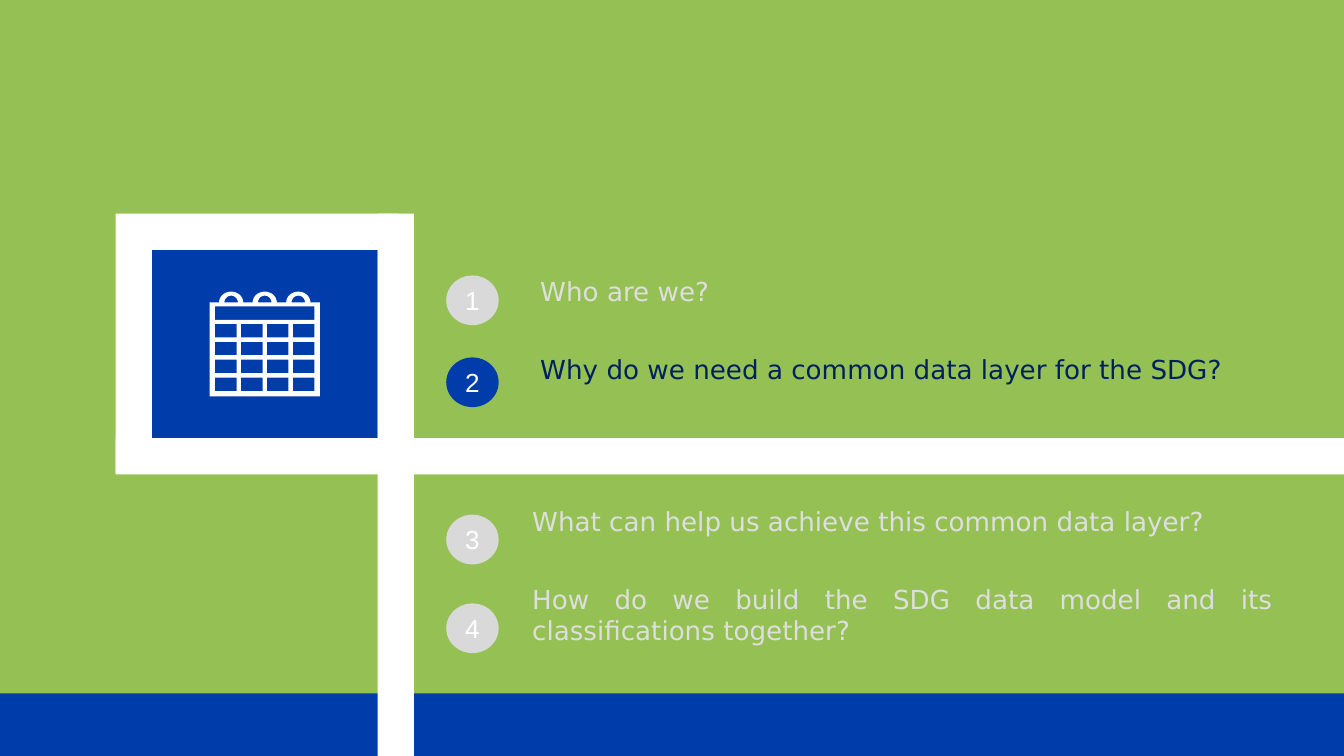
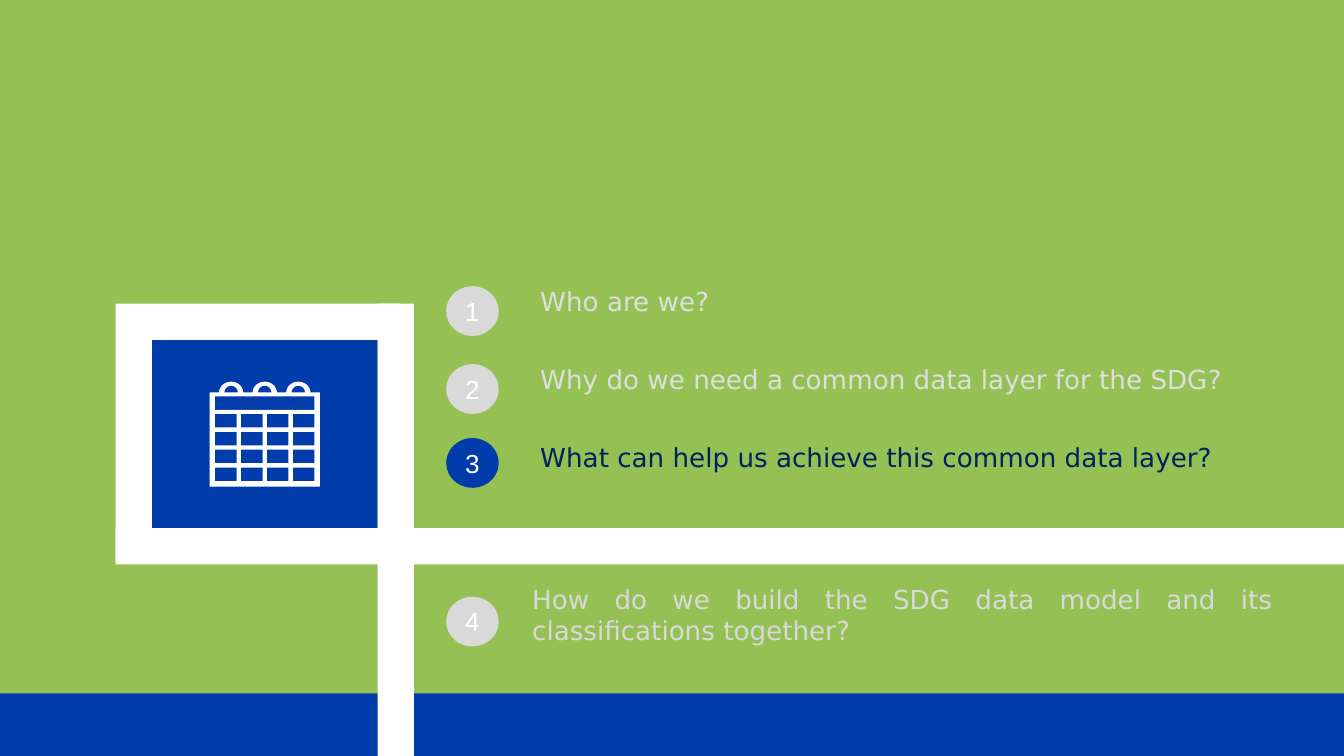
from math import cos, pi, sin

from pptx import Presentation
from pptx.dml.color import RGBColor
from pptx.enum.shapes import MSO_SHAPE as SHAPE
from pptx.enum.text import MSO_ANCHOR as ANCHOR, PP_ALIGN as ALIGN
from pptx.util import Inches, Pt

GREEN = RGBColor(0x95, 0xC1, 0x54)
BLUE = RGBColor(0x00, 0x3D, 0xAB)
NAVY = RGBColor(0x00, 0x20, 0x60)
WHITE = RGBColor(0xFF, 0xFF, 0xFF)
BADGE_GREY = RGBColor(0xD9, 0xD9, 0xD9)
TEXT_GREY = RGBColor(0xDE, 0xDE, 0xDE)

WIDTH = 10
HEIGHT = WIDTH * 9 / 16
BAR = 0.27  # thickness of the white bars
FONT_SIZE = Pt(14)

TOPICS = [
    "Who are we?",
    "Why do we need a common data layer for the SDG?",
    "What can help us achieve this common data layer?",
    "How do we build the SDG data model and its classifications together?",
]

# One entry per slide: frame top, current topic, badge tops, and the text
# blocks as (left, top, height, first topic, last topic, resting color)
AGENDAS = [
    (1.59, 2, [2.05, 2.66, 3.83, 4.49],
     [(3.88, 3.76, 1.31, 3, 4, TEXT_GREY), (3.94, 2.05, 1.1, 1, 2, TEXT_GREY)]),
    (2.26, 3, [2.13, 2.71, 3.26, 4.44],
     [(3.88, 4.34, 0.73, 4, 4, BADGE_GREY), (3.94, 2.12, 1.7, 1, 3, TEXT_GREY)]),
]


def add_block(slide, kind, left, top, width, height, color):
    shape = slide.shapes.add_shape(
        kind, Inches(left), Inches(top), Inches(width), Inches(height))
    shape.shadow.inherit = False
    shape.fill.solid()
    shape.fill.fore_color.rgb = color
    shape.line.fill.background()
    return shape


def arc_points(center, base, radius_x, radius_y, steps=16):
    """Upper half of an ellipse, from right to left."""
    angles = [pi * step / steps for step in range(steps + 1)]
    return [(Inches(center + radius_x * cos(angle)),
             Inches(base - radius_y * sin(angle))) for angle in angles]


presentation = Presentation()
presentation.slide_width = Inches(WIDTH)
presentation.slide_height = Inches(HEIGHT)
background = presentation.slide_master.background.fill
background.solid()
background.fore_color.rgb = GREEN

for frame_top, current, badge_tops, text_blocks in AGENDAS:
    slide = presentation.slides.add_slide(presentation.slide_layouts[6])

    # Blue tile
    add_block(slide, SHAPE.RECTANGLE, 1.13, frame_top + BAR, 1.68, 1.41, BLUE)

    # Calendar: body with three rings, then the holes in it
    left, right = 1.56, 2.38
    top, bottom = frame_top + 0.66, frame_top + 1.36
    rings = [2.22, 1.97, 1.72]
    outline = [(Inches(right), Inches(top))]
    for ring in rings:
        outline += arc_points(ring, top, 0.09, 0.08)
    outline += [(Inches(x), Inches(y))
                for x, y in [(left, top), (left, bottom), (right, bottom)]]
    contours = [outline] + [arc_points(ring, top, 0.05, 0.05) for ring in rings]

    holes = [(1.6, top + 0.03, 0.74)]
    holes += [(1.6 + 0.58 * column / 3, top + 0.16 + 0.4 * row / 3, 0.16)
              for row in range(4) for column in range(4)]
    for x, y, width in holes:
        corners = [(x, y), (x + width, y), (x + width, y + 0.1), (x, y + 0.1)]
        contours.append([(Inches(a), Inches(b)) for a, b in corners])

    builder = slide.shapes.build_freeform(*outline[0])
    for number, contour in enumerate(contours):
        if number:
            builder.move_to(*contour[0])
        builder.add_line_segments(contour[1:], close=True)
    calendar = builder.convert_to_shape()
    calendar.shadow.inherit = False
    calendar.fill.solid()
    calendar.fill.fore_color.rgb = WHITE
    calendar.line.fill.background()

    # Bottom band
    add_block(slide, SHAPE.RECTANGLE, 0, 5.16, WIDTH, HEIGHT - 5.16, BLUE)

    # Numbered badges
    for number, badge_top in enumerate(badge_tops, 1):
        color = BLUE if number == current else BADGE_GREY
        badge = add_block(slide, SHAPE.OVAL, 3.32, badge_top, 0.39, 0.37, color)
        frame = badge.text_frame
        frame.text = str(number)
        frame.word_wrap = False
        frame.vertical_anchor = ANCHOR.MIDDLE
        frame.margin_left = frame.margin_right = 0
        frame.margin_top = frame.margin_bottom = 0
        paragraph = frame.paragraphs[0]
        paragraph.alignment = ALIGN.CENTER
        font = paragraph.runs[0].font
        font.name, font.size = "Arial", FONT_SIZE
        font.color.rgb = WHITE

    # White frame, running on to the right and bottom edges
    for bar in [
        (0.86, frame_top, BAR, 1.93),
        (2.81, frame_top, BAR, HEIGHT - frame_top),
        (1.13, frame_top, 1.84, BAR),
        (0.86, frame_top + 1.67, WIDTH - 0.86, BAR),
    ]:
        add_block(slide, SHAPE.RECTANGLE, *bar, WHITE)

    # Topics
    for left, top, height, first, last, resting_color in text_blocks:
        box = slide.shapes.add_textbox(
            Inches(left), Inches(top), Inches(5.67), Inches(height))
        frame = box.text_frame
        frame.word_wrap = True
        frame.margin_left = frame.margin_right = 0
        frame.margin_top = frame.margin_bottom = 0
        frame.text = "\n".join(TOPICS[first - 1:last])
        for number, paragraph in enumerate(frame.paragraphs, first):
            paragraph.alignment = ALIGN.JUSTIFY
            paragraph.space_before = Pt(0 if number == first else 25)
            properties = paragraph._p.get_or_add_pPr()
            for side in ("marL", "marR"):
                properties.set(side, str(Inches(0.08)))
            font = paragraph.runs[0].font
            font.name, font.size = "DejaVu Sans", FONT_SIZE
            font.color.rgb = NAVY if number == current else resting_color

presentation.save("out.pptx")
